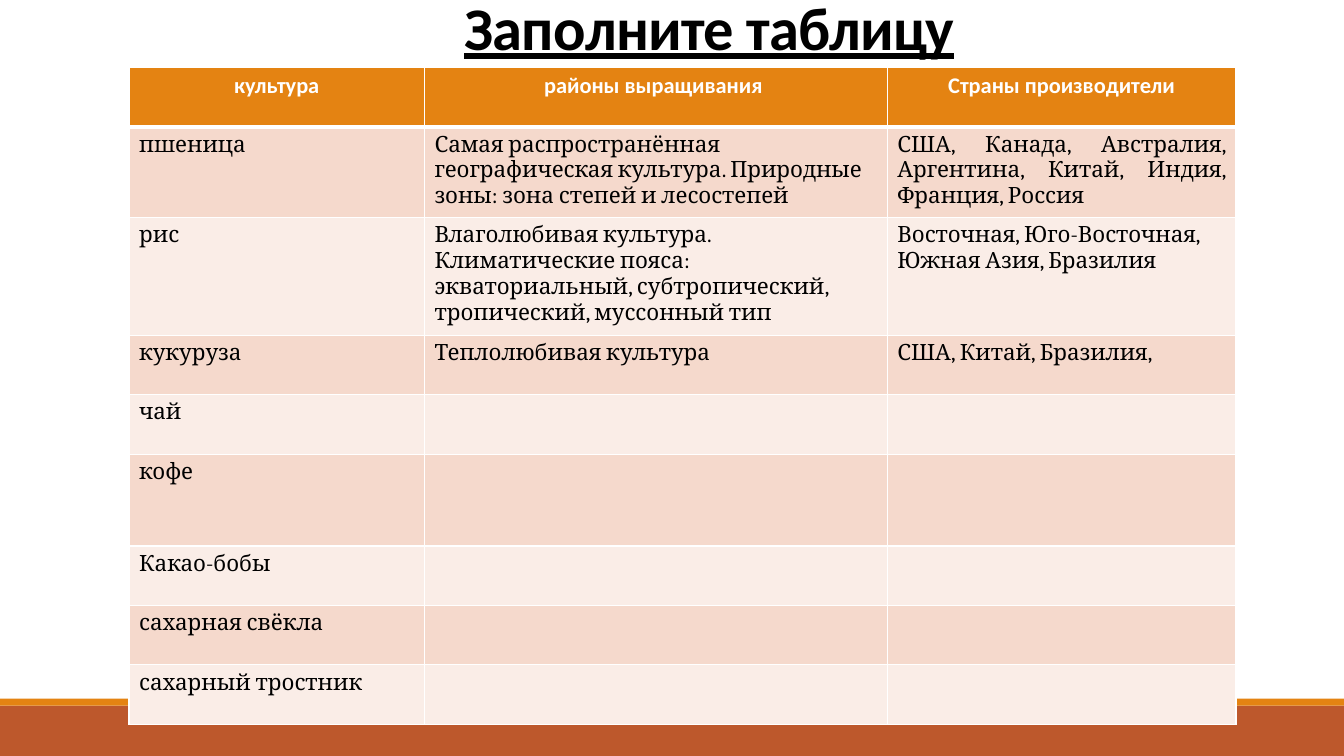
from dataclasses import dataclass

from lxml.etree import SubElement
from pptx import Presentation
from pptx.dml.color import RGBColor
from pptx.enum.shapes import MSO_SHAPE as Shape
from pptx.enum.text import MSO_ANCHOR as Anchor, PP_ALIGN as Align
from pptx.oxml.ns import qn
from pptx.util import Inches, Pt


@dataclass(frozen=True)
class Theme:
    """Colours, fonts and type sizes of the slide."""
    orange: str = "E48312"
    brick: str = "BD582C"
    bands: tuple = ("F5D9CC", "FAEDE7")
    white: str = "FFFFFF"
    black: str = "000000"
    head_font: str = "Calibri"
    body_font: str = "Cambria"
    title_size: float = 43.2
    table_size: float = 16
    rule: float = 1
    head_rule: float = 3


THEME = Theme()
WIDTH, HEIGHT = Inches(13.33), Inches(7.5)
COLUMNS = (2.93, 4.59, 3.46)
ROW, TALL_ROW, TALL_INDEX = 0.59, 0.91, 5
HEADERS = ("культура", "районы выращивания ", "Страны производители")
CROPS = (
    ("пшеница",
     "Самая распространённая географическая культура. "
     "Природные зоны: зона степей и лесостепей",
     "США, Канада, Австралия, Аргентина, Китай, Индия, Франция, Россия"),
    ("рис",
     "Влаголюбивая культура. Климатические пояса: экваториальный, "
     "субтропический, тропический, муссонный тип",
     "Восточная, Юго-Восточная, Южная Азия, Бразилия"),
    ("кукуруза", "Теплолюбивая культура", "США, Китай, Бразилия,"),
    ("чай", "", ""),
    ("кофе", "", ""),
    ("Какао-бобы", "", ""),
    ("сахарная свёкла", "", ""),
    ("сахарный тростник", "", ""),
)


def add_run(p, text, size, font, color, bold=False, underline=False):
    """Add one formatted run to a paragraph and return it."""
    r = p.add_run()
    r.text = text
    r.font.size, r.font.name = Pt(size), font
    r.font.bold, r.font.underline = bold, underline
    r.font.color.rgb = RGBColor.from_string(color)
    return r


def add_band(s, top, height, color):
    """Add a full-width band; top and height are shares of the slide."""
    sp = s.shapes.add_shape(Shape.RECTANGLE, 0, int(HEIGHT * top),
                            WIDTH, int(HEIGHT * height))
    sp.shadow.inherit = False
    sp.fill.solid()
    sp.fill.fore_color.rgb = RGBColor.from_string(color)
    sp.line.fill.background()


def add_title(s, text):
    """Add the underlined title above the table."""
    sp = s.shapes.add_textbox(int(WIDTH * 0.11), 0, Inches(11), Inches(0.67))
    tf = sp.text_frame
    tf.word_wrap, tf.vertical_anchor = True, Anchor.BOTTOM
    p = tf.paragraphs[0]
    p.alignment, p.line_spacing = Align.CENTER, 0.85
    style = THEME.title_size, THEME.head_font, THEME.black
    for r in (add_run(p, " ", *style),
              add_run(p, text, *style, bold=True, underline=True)):
        r.font._element.set("spc", "-50")


def set_borders(cell, top, bottom):
    """Draw white borders, with the given top and bottom widths."""
    tc_pr = cell._tc.get_or_add_tcPr()
    widths = {"lnL": THEME.rule, "lnR": THEME.rule, "lnT": top, "lnB": bottom}
    for tag, width in widths.items():
        ln = SubElement(tc_pr, qn(f"a:{tag}"), w=str(Pt(width)))
        fill = SubElement(ln, qn("a:solidFill"))
        SubElement(fill, qn("a:srgbClr"), val=THEME.white)


def fill_cell(cell, text, row, align):
    """Set the borders, fill and text of a cell according to its row."""
    head = row == 0
    set_borders(cell, THEME.head_rule if row == 1 else THEME.rule,
                THEME.head_rule if head else THEME.rule)
    cell.fill.solid()
    color = THEME.orange if head else THEME.bands[(row - 1) % 2]
    cell.fill.fore_color.rgb = RGBColor.from_string(color)
    p = cell.text_frame.paragraphs[0]
    p.alignment = align
    if text:
        font = THEME.head_font if head else THEME.body_font
        ink = THEME.white if head else THEME.black
        add_run(p, text, THEME.table_size, font, ink, bold=head)


def add_crop_table(s, rows, justified):
    """Add the crop table; justified holds (row, column) positions."""
    heights = [TALL_ROW if i == TALL_INDEX else ROW for i in range(len(rows))]
    table = s.shapes.add_table(
        len(rows), len(COLUMNS), Inches(1.28), Inches(0.67),
        Inches(sum(COLUMNS)), Inches(sum(heights))).table
    for column, width in zip(table.columns, COLUMNS):
        column.width = Inches(width)
    for i, (texts, height) in enumerate(zip(rows, heights)):
        table.rows[i].height = Inches(height)
        for j, text in enumerate(texts):
            align = Align.CENTER if i == 0 else Align.LEFT
            if (i, j) in justified:
                align = Align.JUSTIFY
            fill_cell(table.cell(i, j), text, i, align)


def main():
    """Build the slide and save it."""
    prs = Presentation()
    prs.slide_width, prs.slide_height = WIDTH, HEIGHT
    s = prs.slides.add_slide(prs.slide_layouts[6])
    add_band(s, 0.9333, 0.0667, THEME.brick)
    add_band(s, 0.924, 0.0093, THEME.orange)
    add_title(s, "Заполните таблицу")
    add_crop_table(s, (HEADERS, *CROPS), {(1, 2)})
    prs.save("out.pptx")


if __name__ == "__main__":
    main()
